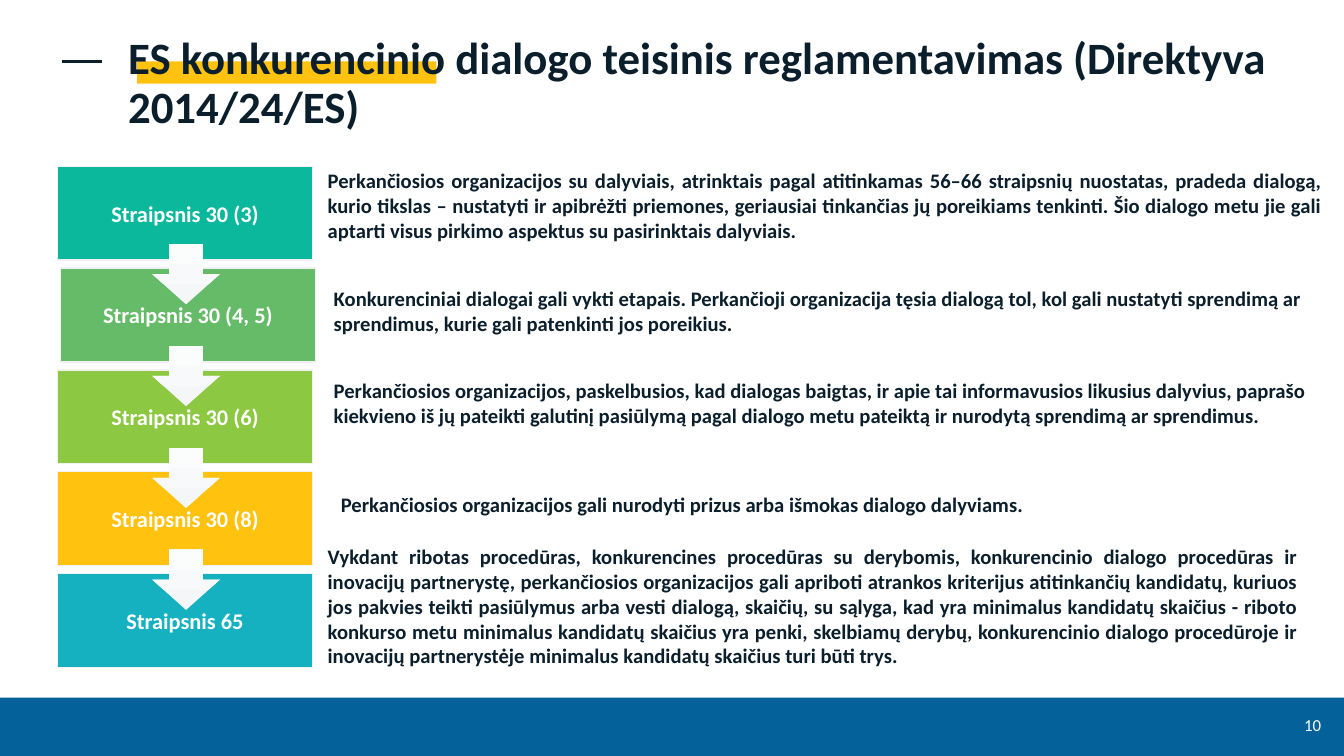
from dataclasses import dataclass

import pptx
import pptx.dml.color
import pptx.enum.shapes
import pptx.enum.text
import pptx.oxml.xmlchemy
import pptx.shapes.autoshape
import pptx.slide
import pptx.text.text
import pptx.util
from lxml import etree
from pptx.oxml.ns import qn

SHAPE = pptx.enum.shapes.MSO_SHAPE
ALIGN = pptx.enum.text.PP_ALIGN
ANCHOR = pptx.enum.text.MSO_ANCHOR
SLIDE_W = pptx.util.Inches(13.33)
SLIDE_H = pptx.util.Inches(7.5)


@dataclass(frozen=True)
class Theme:
    font: str = "Calibri"
    ink: str = "0B1E2C"
    white: str = "FFFFFF"
    footer: str = "04619A"
    highlight: str = "FFC20E"
    outline: str = "EFF1F2"
    arrow_from: str = "F4F6F7"
    arrow_to: str = "FBFCFC"
    title_size: float = 32
    label_size: float = 16
    body_size: float = 14.7
    number_size: float = 12


@dataclass(frozen=True)
class Box:
    """Position and size in percent of the slide's width and height."""
    left: float
    top: float
    width: float
    height: float

    def place(self) -> tuple[int, int, int, int]:
        return (share(self.left, SLIDE_W), share(self.top, SLIDE_H),
                share(self.width, SLIDE_W), share(self.height, SLIDE_H))


@dataclass(frozen=True)
class Step:
    label: str
    color: str
    text: str
    text_box: Box
    align: ALIGN = ALIGN.LEFT
    left: float = 4.28


THEME = Theme()
STEP_TOP, STEP_PITCH = 22, 13.47
STEP_W, STEP_H = 18.98, 12.4
ARROW = Box(11.33, 32.27, 5.03, 8)

TITLE = "ES konkurencinio dialogo teisinis reglamentavimas (Direktyva 2014/24/ES)"
STEPS = [
    Step("Straipsnis 30 (3)", "0BB89C",
         "Perkančiosios organizacijos su dalyviais, atrinktais pagal atitinkamas "
         "56–66 straipsnių nuostatas, pradeda dialogą, kurio tikslas – nustatyti ir "
         "apibrėžti priemones, geriausiai tinkančias jų poreikiams tenkinti. Šio "
         "dialogo metu jie gali aptarti visus pirkimo aspektus su pasirinktais "
         "dalyviais.",
         Box(24.38, 22.27, 73.97, 13.73), ALIGN.JUSTIFY),
    Step("Straipsnis 30 (4, 5)", "66BB69",
         "Konkurenciniai dialogai gali vykti etapais. Perkančioji organizacija tęsia "
         "dialogą tol, kol gali nustatyti sprendimą ar sprendimus, kurie gali "
         "patenkinti jos poreikius.",
         Box(24.83, 37.87, 74.79, 6.53), left=4.5),
    Step("Straipsnis 30 (6)", "8CC841",
         "Perkančiosios organizacijos, paskelbusios, kad dialogas baigtas, ir apie tai "
         "informavusios likusius dalyvius, paprašo kiekvieno iš jų pateikti galutinį "
         "pasiūlymą pagal dialogo metu pateiktą ir nurodytą sprendimą ar sprendimus.",
         Box(24.83, 50, 73.89, 6.53)),
    Step("Straipsnis 30 (8)", "FFC20E",
         "Perkančiosios organizacijos gali nurodyti prizus arba išmokas dialogo "
         "dalyviams.",
         Box(25.36, 65.07, 73.29, 3.33)),
    Step("Straipsnis 65", "16B1C1",
         "Vykdant ribotas procedūras, konkurencines procedūras su derybomis, "
         "konkurencinio dialogo procedūras ir inovacijų partnerystę, perkančiosios "
         "organizacijos gali apriboti atrankos kriterijus atitinkančių kandidatų, "
         "kuriuos jos pakvies teikti pasiūlymus arba vesti dialogą, skaičių, su "
         "sąlyga, kad yra minimalus kandidatų skaičius - riboto konkurso metu "
         "minimalus kandidatų skaičius yra penki, skelbiamų derybų, konkurencinio "
         "dialogo procedūroje ir inovacijų partnerystėje minimalus kandidatų skaičius "
         "turi būti trys.",
         Box(24.38, 72, 72.17, 16.4), ALIGN.JUSTIFY),
]


def share(percent: float, whole: int) -> int:
    return round(percent / 100 * whole)


def rgb(color: str) -> pptx.dml.color.RGBColor:
    return pptx.dml.color.RGBColor.from_string(color)


def write(tf: pptx.text.text.TextFrame, text: str, size: float, color: str,
          align: ALIGN, bold: bool = True,
          anchor: ANCHOR = ANCHOR.MIDDLE) -> pptx.text.text._Paragraph:
    tf.word_wrap = True
    tf.vertical_anchor = anchor
    p = tf.paragraphs[0]
    p.alignment = align
    r = p.add_run()
    r.text = text
    r.font.name = THEME.font
    r.font.size = pptx.util.Pt(size)
    r.font.bold = bold
    r.font.color.rgb = rgb(color)
    return p


def add_shape(s: pptx.slide.Slide, kind: SHAPE, box: Box,
              fill: str) -> pptx.shapes.autoshape.Shape:
    sp = s.shapes.add_shape(kind, *box.place())
    sp.shadow.inherit = False
    sp.fill.solid()
    sp.fill.fore_color.rgb = rgb(fill)
    sp.line.fill.background()
    return sp


def add_title(s: pptx.slide.Slide) -> None:
    """Fill the title and bring it in front of its highlight."""
    sp = s.shapes.title
    sp.left, sp.top, sp.width, sp.height = Box(8.78, 8.8, 88.6, 4.8).place()
    sp.text_frame.auto_size = pptx.enum.text.MSO_AUTO_SIZE.NONE
    p = write(sp.text_frame, TITLE, THEME.title_size, THEME.ink, ALIGN.LEFT)
    p.line_spacing = 0.9
    sp.element.getparent().append(sp.element)


def add_dash(s: pptx.slide.Slide) -> None:
    y = share(8.13, SLIDE_H)
    line = s.shapes.add_connector(pptx.enum.shapes.MSO_CONNECTOR.STRAIGHT,
                                  share(4.58, SLIDE_W), y, share(7.58, SLIDE_W), y)
    line.line.color.rgb = rgb(THEME.ink)
    line.line.width = pptx.util.Pt(2)
    etree.SubElement(line.element.spPr, qn("a:effectLst"))


def add_step(s: pptx.slide.Slide, step: Step, row: int) -> None:
    box = Box(step.left, STEP_TOP + row * STEP_PITCH, STEP_W, STEP_H)
    sp = add_shape(s, SHAPE.RECTANGLE, box, step.color)
    sp.line.color.rgb = rgb(THEME.outline)
    sp.line.width = pptx.util.Pt(1)
    write(sp.text_frame, step.label, THEME.label_size, THEME.white, ALIGN.CENTER)


def add_arrow(s: pptx.slide.Slide, row: int) -> None:
    box = Box(ARROW.left, ARROW.top + row * STEP_PITCH, ARROW.width, ARROW.height)
    sp = add_shape(s, SHAPE.DOWN_ARROW, box, THEME.arrow_from)
    sp.fill.gradient()
    sp.fill.gradient_angle = 90
    for stop, color in zip(sp.fill.gradient_stops, (THEME.arrow_from, THEME.arrow_to)):
        stop.color.rgb = rgb(color)


def add_description(s: pptx.slide.Slide, step: Step) -> None:
    tf = s.shapes.add_textbox(*step.text_box.place()).text_frame
    tf.margin_left = tf.margin_top = tf.margin_right = tf.margin_bottom = 0
    p = write(tf, step.text, THEME.body_size, THEME.ink, step.align, anchor=ANCHOR.TOP)
    p.space_after = pptx.util.Pt(3.3)


def main() -> None:
    prs = pptx.Presentation()
    prs.slide_width, prs.slide_height = SLIDE_W, SLIDE_H
    s = prs.slides.add_slide(prs.slide_layouts.get_by_name("Title Only"))
    add_shape(s, SHAPE.RECTANGLE, Box(0, 92.27, 100, 7.73), THEME.footer)
    add_dash(s)
    add_shape(s, SHAPE.RECTANGLE, Box(10.2, 8.13, 22.28, 2.93), THEME.highlight)
    add_title(s)
    number = s.shapes.add_textbox(*Box(95.95, 93.2, 3.08, 5.33).place())
    write(number.text_frame, "10", THEME.number_size, THEME.white, ALIGN.RIGHT, bold=False)
    for row, step in enumerate(STEPS):
        add_step(s, step, row)
    for row in range(len(STEPS) - 1):
        add_arrow(s, row)
    for step in STEPS:
        add_description(s, step)
    prs.save("out.pptx")


if __name__ == "__main__":
    main()
